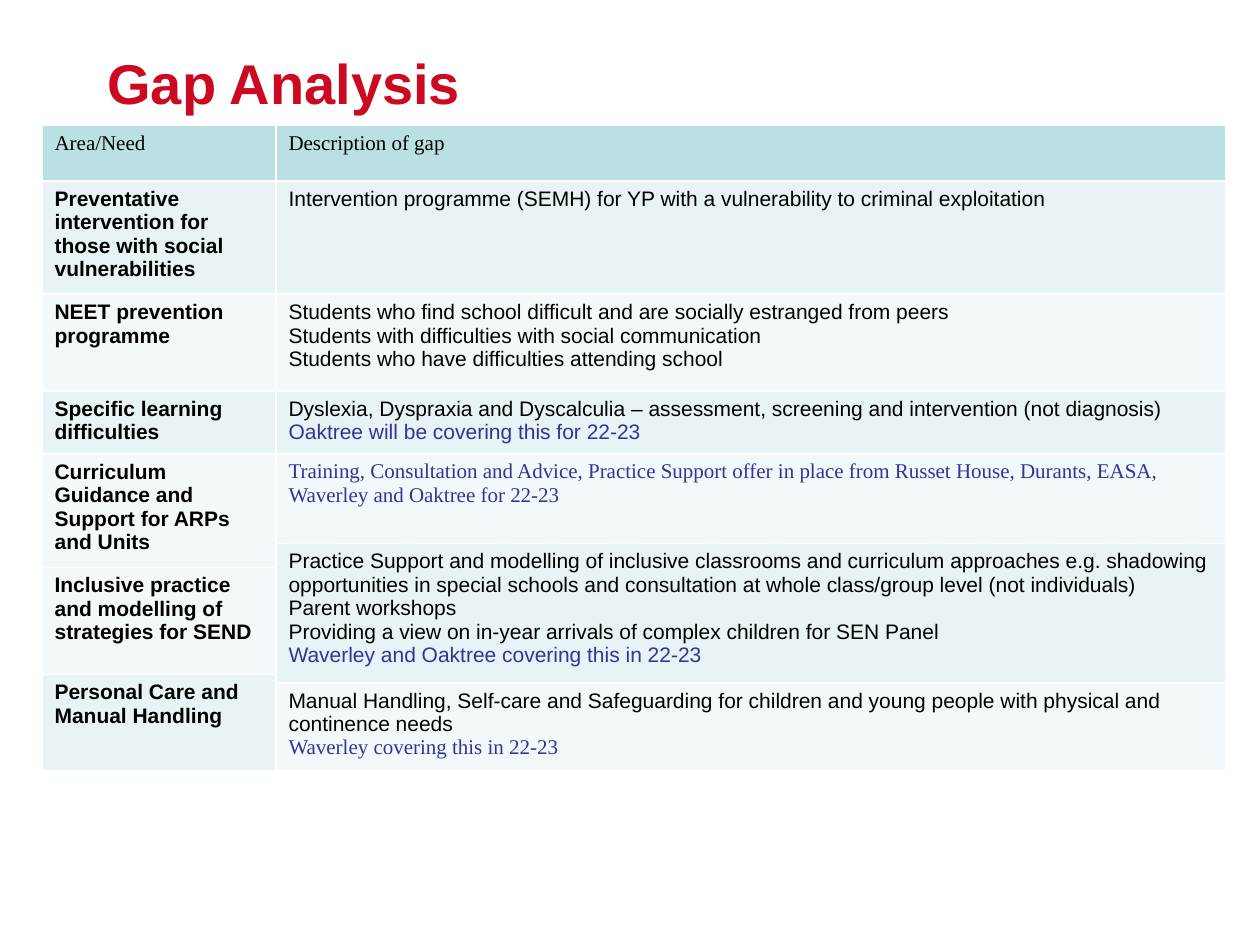
from pptx import Presentation
from pptx.dml.color import RGBColor
from pptx.util import Pt

SANS, SERIF = "Arial", "Times New Roman"
RED, BLACK, BLUE = "CD0921", "000000", "333399"
HEAD, BAND, LIGHT = "BBE0E3", "E7F3F4", "F3F9FA"

COLUMN_WIDTHS = [133.7, 542.6]
ROW_HEIGHTS = [31.7, 61, 55.2, 34, 51.2, 13.2, 61.2, 0, 46.9]

# Left column: first row, last row, fill, need
NEEDS = [
    (1, 1, BAND, "Preventative intervention for those with social vulnerabilities"),
    (2, 2, LIGHT, "NEET prevention programme"),
    (3, 3, BAND, "Specific learning difficulties"),
    (4, 5, LIGHT, "Curriculum Guidance and Support for ARPs and Units"),
    (6, 6, LIGHT, "Inclusive practice and modelling of strategies for SEND"),
    (7, 8, BAND, "Personal Care and Manual Handling"),
]

# Right column: first row, last row, fill, gaps, cover in place, font of the cover
GAPS = [
    (1, 1, BAND, ["Intervention programme (SEMH) for YP with a vulnerability to "
                  "criminal exploitation"], None, SANS),
    (2, 2, LIGHT, ["Students who find school difficult and are socially estranged from peers",
                   "Students with difficulties with social communication",
                   "Students who have difficulties attending school"], None, SANS),
    (3, 3, BAND, ["Dyslexia, Dyspraxia and Dyscalculia – assessment, screening and "
                  "intervention (not diagnosis)"],
     "Oaktree will be covering this for 22-23", SANS),
    (4, 4, LIGHT, [],
     "Training, Consultation and Advice, Practice Support offer in place from "
     "Russet House, Durants, EASA, Waverley and Oaktree for 22-23", SERIF),
    (5, 7, BAND, ["Practice Support and modelling of inclusive classrooms and curriculum "
                  "approaches e.g. shadowing opportunities in special schools and "
                  "consultation at whole class/group level (not individuals)",
                  "Parent workshops",
                  "Providing a view on in-year arrivals of complex children for SEN Panel"],
     "Waverley and Oaktree covering this in 22-23", SANS),
    (8, 8, LIGHT, ["Manual Handling, Self-care and Safeguarding for children and young "
                   "people with physical and continence needs"],
     "Waverley covering this in 22-23", SERIF),
]


def rgb(value):
    return RGBColor.from_string(value)


def set_end_size(p, size):
    """Size the paragraph mark, which otherwise makes table rows taller."""
    end = p._p.get_or_add_endParaRPr()
    end.set("sz", str(size * 100))


def add_text(tf, text, size=12, font=SANS, color=BLACK, bold=False):
    """Write one paragraph, using the empty first one if it is free."""
    p = tf.paragraphs[0]
    if p.runs:
        p = tf.add_paragraph()
    r = p.add_run()
    r.text = text
    r.font.size = Pt(size)
    r.font.name = font
    r.font.bold = bold
    r.font.color.rgb = rgb(color)
    set_end_size(p, size)


def fill_cell(table, first, last, column, fill):
    """Merge the rows of one entry, fill them and return the text frame."""
    cell = table.cell(first, column)
    if last > first:
        cell.merge(table.cell(last, column))
    for row in range(first, last + 1):
        part = table.cell(row, column)
        part.fill.solid()
        part.fill.fore_color.rgb = rgb(fill)
        # Rows hidden by a merge must not force a minimum height
        if row > first:
            part.margin_top = part.margin_bottom = 0
            set_end_size(part.text_frame.paragraphs[0], 1)
    return cell.text_frame


def add_title(s):
    tf = s.shapes.add_textbox(Pt(54.3), Pt(24), Pt(642), Pt(90)).text_frame
    tf.word_wrap = True
    add_text(tf, "Gap Analysis", size=32, color=RED, bold=True)


def add_gap_table(s):
    table = s.shapes.add_table(len(ROW_HEIGHTS), len(COLUMN_WIDTHS), Pt(24), Pt(71.6),
                               Pt(sum(COLUMN_WIDTHS)), Pt(sum(ROW_HEIGHTS))).table
    for column, width in zip(table.columns, COLUMN_WIDTHS):
        column.width = Pt(width)
    for row, height in zip(table.rows, ROW_HEIGHTS):
        row.height = Pt(height)

    # Header
    for column, heading in enumerate(["Area/Need", "Description of gap"]):
        add_text(fill_cell(table, 0, 0, column, HEAD), heading, font=SERIF)

    # Needs
    for first, last, fill, need in NEEDS:
        add_text(fill_cell(table, first, last, 0, fill), need, bold=True)

    # Gaps, each followed by the cover in place
    for first, last, fill, gaps, cover, font in GAPS:
        tf = fill_cell(table, first, last, 1, fill)
        for gap in gaps:
            add_text(tf, gap)
        if cover:
            add_text(tf, cover, font=font, color=BLUE)


def main():
    prs = Presentation()
    prs.slide_width, prs.slide_height = Pt(720), Pt(540)
    s = prs.slides.add_slide(prs.slide_layouts[6])
    add_title(s)
    add_gap_table(s)
    prs.save("out.pptx")


if __name__ == "__main__":
    main()
